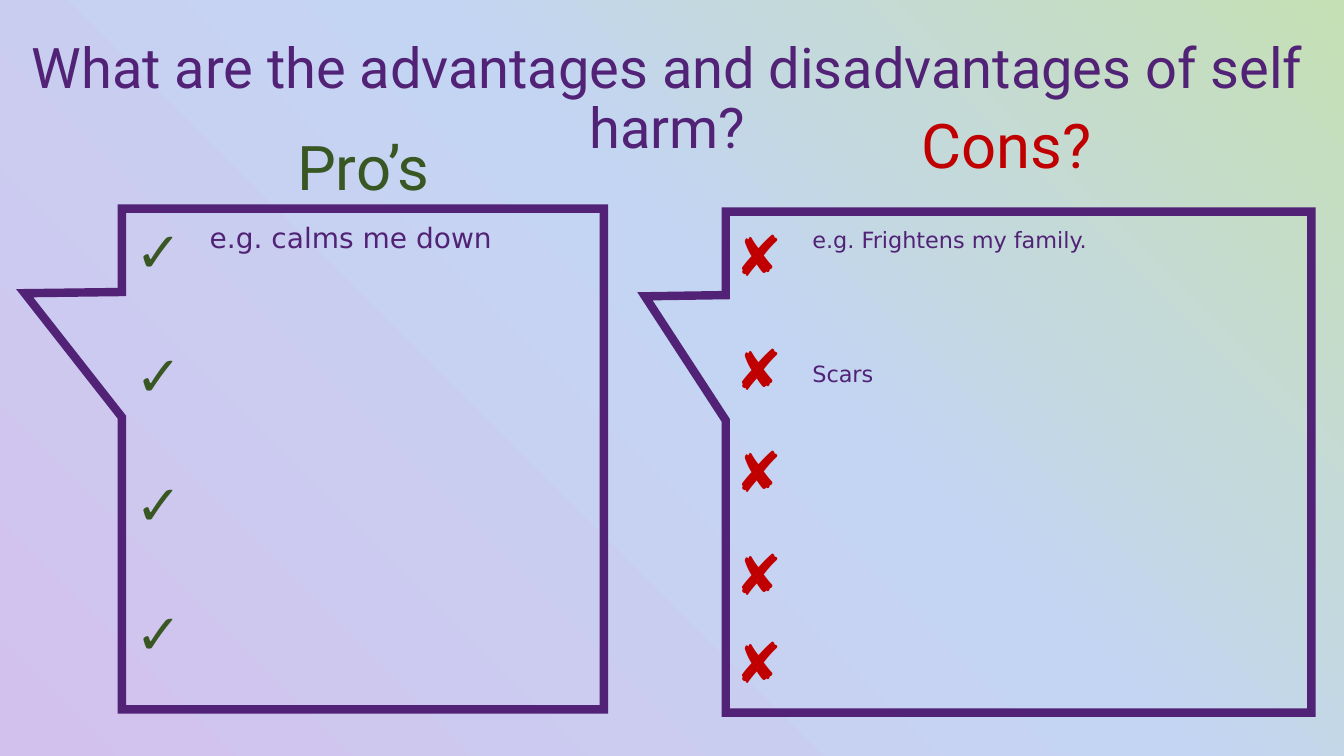
from dataclasses import dataclass

from pptx import Presentation, util as u
from pptx.dml.color import RGBColor
from pptx.enum import shapes, text
from pptx.oxml import parse_xml
from pptx.oxml.ns import nsdecls, qn

PURPLE, GREEN, RED = "512275", "385723", "C00000"
BACKDROP = [(0, "D3C1ED"), (56, "C4D5F3"), (100, "C5E0B4")]
HEADING_INSET = 61.5
MARK_SIZE = (52.6, 55.4)

Box = tuple[float, float, float, float]


@dataclass
class Panel:
    heading: str
    color: str
    heading_box: Box
    heading_idx: int
    callout_box: Box
    tail_x: float
    lines: list[str]
    list_box: Box
    list_idx: int
    list_size: float
    line_gap: float
    mark: str
    mark_left: float
    mark_tops: list[float]


PANELS = [
    Panel("Pro’s", GREEN, (111.6, 36.7, 295.9, 75.6), 1,
          (87.1, 149, 344.2, 357.8), -0.702,
          ["e.g. calms me down"], (142.6, 154.1, 288.7, 104.4), 2, 20, 0,
          "✓", 90, [151.2, 239.8, 331.9, 424.1]),
    Panel("Cons?", RED, (494.6, 20.9, 449.3, 131), 3,
          (518.4, 151.2, 418.3, 357.8), -0.638,
          ["e.g. Frightens my family.", "Scars"],
          (573.1, 157.7, 363.6, 162.7), 4, 16, 77,
          "✘", 518.4, [154.1, 235.4, 308.2, 381.6, 445]),
]


def rgb(value: str) -> RGBColor:
    return RGBColor.from_string(value)


def place(sp, box: Box) -> None:
    sp.left, sp.top, sp.width, sp.height = (u.Pt(v) for v in box)


def format_text(tf, font: str, size: float, color: str) -> None:
    for p in tf.paragraphs:
        for r in p.runs:
            r.font.name, r.font.size, r.font.bold = font, u.Pt(size), False
            r.font.color.rgb = rgb(color)


def add_backdrop(s, width: int, height: int) -> None:
    sp = s.shapes.add_shape(shapes.MSO_SHAPE.RECTANGLE, 0, 0, width, height)
    sp.shadow.inherit = False
    sp.line.fill.background()
    stops = "".join(f'<a:gs pos="{pos * 1000}"><a:srgbClr val="{c}"/></a:gs>'
                    for pos, c in BACKDROP)
    fill = parse_xml(
        f'<a:gradFill {nsdecls("a")}><a:gsLst>{stops}</a:gsLst>'
        '<a:path path="circle"><a:fillToRect t="100000" r="100000"/></a:path>'
        '</a:gradFill>')
    sp.element.spPr.find(qn("a:prstGeom")).addnext(fill)
    s.shapes.element.insert(2, sp.element)


def set_heading(sp, words: str, box: Box, size: float, color: str) -> None:
    place(sp, box)
    tf = sp.text_frame
    tf.text = words
    tf.auto_size = text.MSO_AUTO_SIZE.NONE
    tf.vertical_anchor = text.MSO_ANCHOR.TOP
    tf.margin_top, tf.margin_bottom = u.Pt(HEADING_INSET), 0
    p = tf.paragraphs[0]
    p.alignment = text.PP_ALIGN.CENTER
    p.line_spacing, p.space_before = 0.9, u.Pt(0)
    format_text(tf, "Roboto", size, color)


def add_callout(s, panel: Panel) -> None:
    sp = s.shapes.add_shape(shapes.MSO_SHAPE.RECTANGULAR_CALLOUT,
                            *(u.Pt(v) for v in panel.callout_box))
    sp.adjustments[0], sp.adjustments[1] = panel.tail_x, -0.331
    sp.shadow.inherit = False
    sp.fill.background()
    sp.line.color.rgb = rgb(PURPLE)
    sp.line.width = u.Pt(6)
    ln = sp.element.spPr.find(qn("a:ln"))
    ln.append(parse_xml(f'<a:miter {nsdecls("a")} lim="800000"/>'))


def set_list(sp, panel: Panel) -> None:
    place(sp, panel.list_box)
    tf = sp.text_frame
    tf.text = "\n".join(panel.lines)
    tf.auto_size = text.MSO_AUTO_SIZE.NONE
    tf.vertical_anchor = text.MSO_ANCHOR.TOP
    for i, p in enumerate(tf.paragraphs):
        p.space_before = u.Pt(panel.line_gap if i else 0)
        pPr = p._p.get_or_add_pPr()
        pPr.set("marL", "0")
        pPr.set("indent", "0")
        pPr.append(parse_xml(f'<a:buNone {nsdecls("a")}/>'))
    format_text(tf, "DejaVu Sans", panel.list_size, PURPLE)


def add_marks(s, panel: Panel) -> None:
    for top in panel.mark_tops:
        box = (panel.mark_left, top, *MARK_SIZE)
        sp = s.shapes.add_textbox(*(u.Pt(v) for v in box))
        tf = sp.text_frame
        tf.text = panel.mark
        tf.word_wrap = True
        tf.auto_size = text.MSO_AUTO_SIZE.SHAPE_TO_FIT_TEXT
        format_text(tf, "Calibri", 40, panel.color)


def main() -> None:
    prs = Presentation()
    prs.slide_width, prs.slide_height = u.Pt(960), u.Pt(540)
    s = prs.slides.add_slide(prs.slide_layouts.get_by_name("Comparison"))
    holders = {sp.placeholder_format.idx: sp for sp in s.placeholders}
    add_backdrop(s, prs.slide_width, prs.slide_height)
    set_heading(s.shapes.title,
                "What are the advantages and disadvantages of self harm?",
                (-24.5, -33.1, 1002.2, 162), 40, PURPLE)
    for panel in PANELS:
        add_callout(s, panel)
        set_heading(holders[panel.heading_idx], panel.heading,
                    panel.heading_box, 44, panel.color)
        set_list(holders[panel.list_idx], panel)
        add_marks(s, panel)
    prs.save("out.pptx")


if __name__ == "__main__":
    main()
